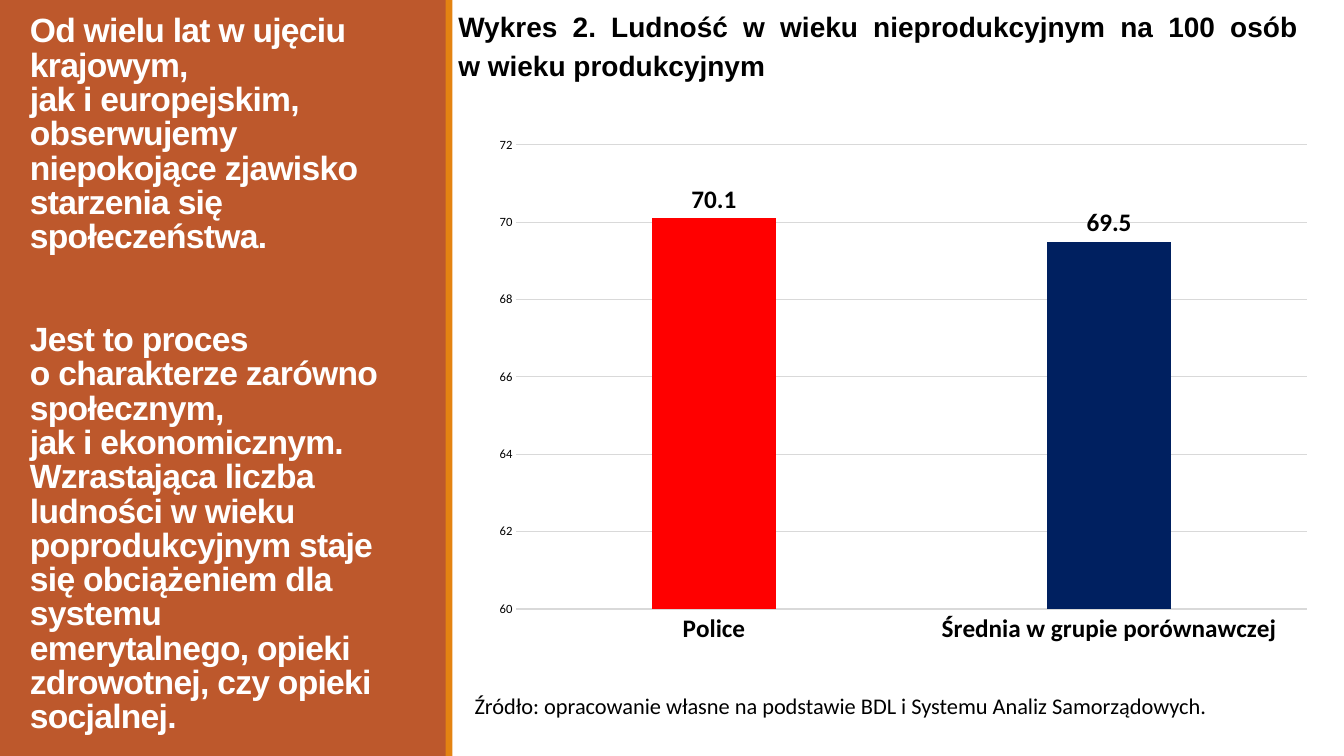
import copy
from dataclasses import dataclass

import pptx
import pptx.chart.data
import pptx.dml.color
import pptx.enum.chart
import pptx.enum.shapes
import pptx.enum.text
import pptx.oxml
import pptx.oxml.ns
import pptx.util
from pptx.util import Cm


@dataclass(frozen=True)
class Theme:
    panel: str = "BD582C"
    stripe: str = "E48312"
    white: str = "FFFFFF"
    ink: str = "000000"
    grid: str = "D9D9D9"
    columns: tuple = ("FF0000", "002060")
    heading_font: str = "Arial"
    body_font: str = "Calibri"
    statement_size: int = 24
    heading_size: int = 20
    label_size: int = 18
    source_size: int = 16
    chart_size: int = 10
    scale_size: int = 9


@dataclass(frozen=True)
class Box:
    """A region of the slide, in centimetres."""
    left: float
    top: float
    width: float
    height: float

    def inner(self, left, top, width, height):
        return Box(self.left + left, self.top + top, width, height)

    def lengths(self):
        return Cm(self.left), Cm(self.top), Cm(self.width), Cm(self.height)


THEME = Theme()
ALIGN = pptx.enum.text.PP_ALIGN
ANCHOR = pptx.enum.text.MSO_ANCHOR
SLIDE_WIDTH, SLIDE_HEIGHT, PANEL_WIDTH = 33.87, 19.05, 11.25

STATEMENT = (
    "Od wielu lat w ujęciu krajowym, \vjak i europejskim, obserwujemy "
    "niepokojące zjawisko starzenia się społeczeństwa.",
    "Jest to proces \vo charakterze zarówno społecznym, \vjak i ekonomicznym. "
    "Wzrastająca liczba ludności w wieku poprodukcyjnym staje się obciążeniem "
    "dla systemu emerytalnego, opieki zdrowotnej, czy opieki socjalnej.",
)
HEADING = ("Wykres 2. Ludność w wieku nieprodukcyjnym na 100 osób "
           "\vw wieku produkcyjnym",)
SOURCE = ("Źródło: opracowanie własne na podstawie BDL i Systemu Analiz "
          "Samorządowych.",)
DEPENDENCY = {"Police": 70.1, "Średnia w grupie porównawczej": 69.5}


def rgb(color):
    return pptx.dml.color.RGBColor.from_string(color)


def set_font(font, size, name=THEME.body_font, color=THEME.ink, bold=False):
    font.size = pptx.util.Pt(size)
    font.name = name
    font.bold = bold
    font.color.rgb = rgb(color)


def write_text(frame, paragraphs, *, size, name=THEME.body_font,
               color=THEME.ink, bold=False, align=ALIGN.LEFT,
               anchor=ANCHOR.TOP, line_spacing=1.0, gap=0, after=0,
               tracking=None, wrap=True):
    """Write paragraphs; gap is the space between them in points."""
    frame.word_wrap = wrap
    frame.auto_size = pptx.enum.text.MSO_AUTO_SIZE.NONE
    frame.vertical_anchor = anchor
    for index, text in enumerate(paragraphs):
        paragraph = frame.add_paragraph() if index else frame.paragraphs[0]
        paragraph.text = text
        paragraph.alignment = align
        paragraph.line_spacing = line_spacing
        paragraph.space_before = pptx.util.Pt(gap if index else 0)
        paragraph.space_after = pptx.util.Pt(after)
        for run in paragraph.runs:
            set_font(run.font, size, name, color, bold)
            properties = run.font._element
            if tracking is not None:
                properties.set("spc", str(round(tracking * 100)))
        # Line breaks take the same format as the words around them
        for line_break in paragraph._p.findall(pptx.oxml.ns.qn("a:br")):
            line_break.insert(0, copy.deepcopy(properties))


def add_block(slide, box, color):
    block = slide.shapes.add_shape(
        pptx.enum.shapes.MSO_SHAPE.RECTANGLE, *box.lengths())
    block.shadow.inherit = False
    block.fill.solid()
    block.fill.fore_color.rgb = rgb(color)
    block.line.fill.background()
    return block


def add_statement_panel(slide, box):
    title = slide.shapes.title
    # Coloured panel with its edge stripe, behind the title
    panel = add_block(slide, box, THEME.panel)
    stripe = add_block(
        slide, box.inner(box.width - 0.02, 0, 0.17, box.height), THEME.stripe)
    for background in (panel, stripe):
        title.element.addprevious(background.element)
    # Statement
    statement = box.inner(0.5, 1.45, 9.43, 16.03)
    title.left, title.top, title.width, title.height = statement.lengths()
    write_text(title.text_frame, STATEMENT, size=THEME.statement_size,
               name=THEME.heading_font, color=THEME.white, bold=True,
               anchor=ANCHOR.MIDDLE, line_spacing=0.85, gap=49, tracking=-0.5)


def add_dependency_chart(slide, box):
    data = pptx.chart.data.CategoryChartData()
    data.categories = list(DEPENDENCY)
    data.add_series("Ludność w wieku nieprodukcyjnym", DEPENDENCY.values())
    chart = slide.shapes.add_chart(
        pptx.enum.chart.XL_CHART_TYPE.COLUMN_CLUSTERED,
        *box.lengths(), data).chart
    chart.has_legend = chart.has_title = False
    set_font(chart.font, THEME.chart_size)

    # Columns and their values
    plot = chart.plots[0]
    plot.gap_width, plot.overlap = 219, -27
    plot.vary_by_categories = False
    columns = plot.series[0]
    columns.format.fill.solid()
    columns.format.fill.fore_color.rgb = rgb(THEME.stripe)
    for index, color in enumerate(THEME.columns):
        fill = columns.points[index].format.fill
        fill.solid()
        fill.fore_color.rgb = rgb(color)
    labels = columns.data_labels
    labels.show_value = True
    labels.position = pptx.enum.chart.XL_LABEL_POSITION.OUTSIDE_END
    set_font(labels.font, THEME.label_size, bold=True)

    # Axes
    groups, scale = chart.category_axis, chart.value_axis
    for axis in (groups, scale):
        axis.major_tick_mark = pptx.enum.chart.XL_TICK_MARK.NONE
        axis.minor_tick_mark = pptx.enum.chart.XL_TICK_MARK.NONE
    set_font(groups.tick_labels.font, THEME.label_size, bold=True)
    set_font(scale.tick_labels.font, THEME.scale_size)
    scale.minimum_scale, scale.maximum_scale, scale.major_unit = 60, 72, 2
    scale.format.line.fill.background()
    for line in (groups.format.line, scale.major_gridlines.format.line):
        line.color.rgb = rgb(THEME.grid)
        line.width = pptx.util.Pt(0.75)


def add_chart_region(slide, box):
    # Heading
    heading = slide.shapes.add_textbox(
        *box.inner(0.05, 0, 22.05, 2.13).lengths())
    write_text(heading.text_frame, HEADING, size=THEME.heading_size,
               name=THEME.heading_font, bold=True, align=ALIGN.JUSTIFY,
               line_spacing=1.15, after=10.3)
    # Source note
    source = slide.shapes.add_textbox(
        *box.inner(0.46, 17.3, 19.2, 0.94).lengths())
    write_text(source.text_frame, SOURCE, size=THEME.source_size,
               anchor=ANCHOR.MIDDLE, wrap=False)
    # Chart
    add_dependency_chart(slide, box.inner(0.92, 3.2, 21.18, 13.28))


def main():
    deck = pptx.Presentation()
    deck.slide_width, deck.slide_height = Cm(SLIDE_WIDTH), Cm(SLIDE_HEIGHT)
    slide = deck.slides.add_slide(deck.slide_layouts.get_by_name("Title Only"))
    add_statement_panel(slide, Box(0, 0, PANEL_WIDTH, SLIDE_HEIGHT))
    add_chart_region(slide, Box(PANEL_WIDTH, 0, SLIDE_WIDTH - PANEL_WIDTH,
                                SLIDE_HEIGHT))
    deck.save("out.pptx")


if __name__ == "__main__":
    main()
